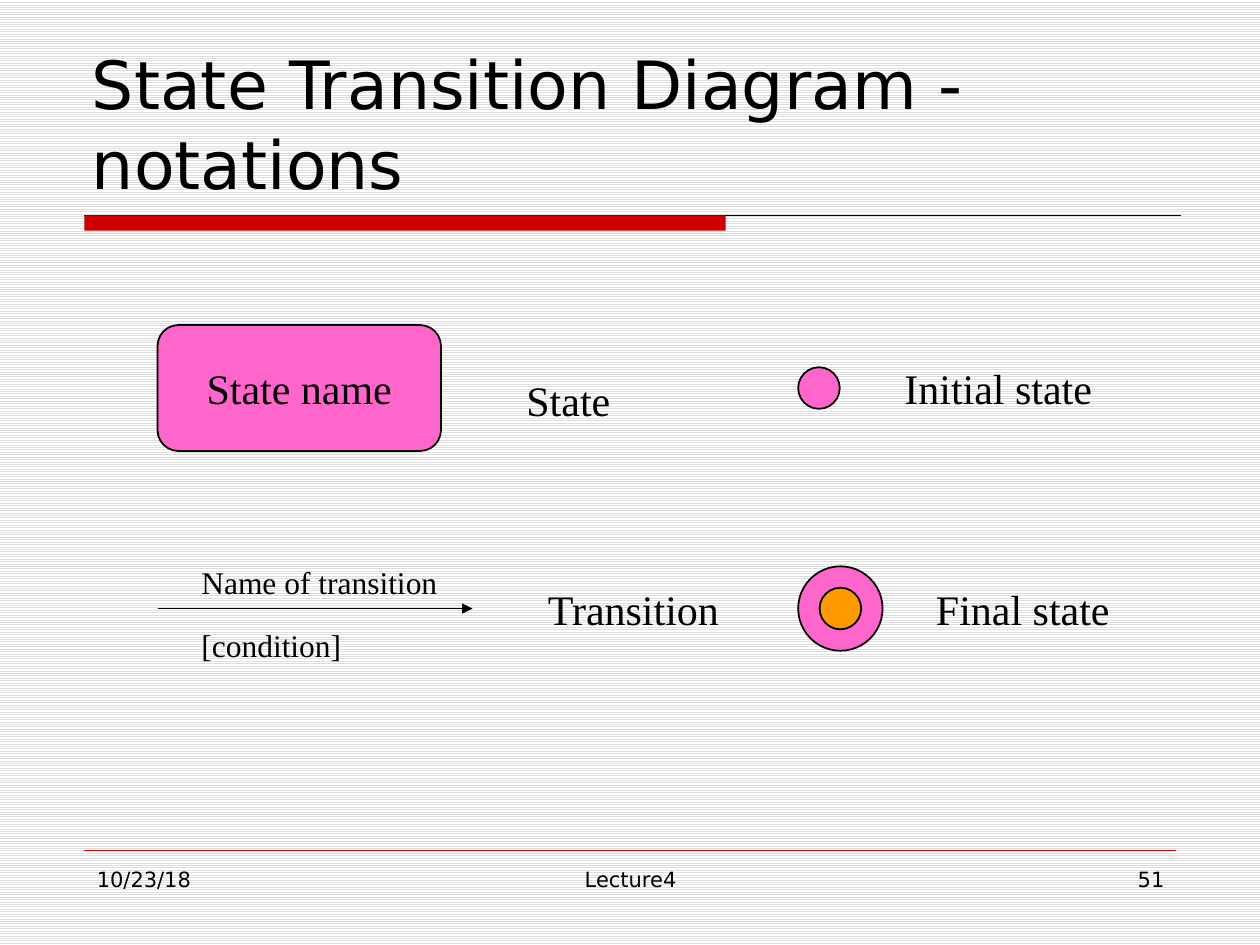
from dataclasses import dataclass

from lxml.etree import SubElement
from pptx import Presentation
from pptx.dml.color import RGBColor
from pptx.enum.dml import MSO_PATTERN
from pptx.enum.shapes import MSO_CONNECTOR, MSO_SHAPE
from pptx.enum.text import MSO_ANCHOR, MSO_AUTO_SIZE, PP_ALIGN
from pptx.oxml.ns import qn
from pptx.util import Inches, Pt


@dataclass(frozen=True)
class Theme:
    """Colours, fonts and type sizes."""
    ink: str = "000000"
    paper: str = "FFFFFF"
    stripe: str = "DDDDDD"
    red: str = "CC0000"
    pink: str = "FF66CC"
    orange: str = "FF9900"
    sans: str = "DejaVu Sans"
    serif: str = "Times New Roman"
    head: int = 38
    body: int = 24
    note: int = 18
    foot: int = 12


class Page:
    """Draws styled elements on one slide."""

    def __init__(self, slide, theme):
        """Keep the slide and theme, and stripe the background."""
        self.slide, self.theme = slide, theme
        fill = slide.background.fill
        fill.patterned()
        fill.pattern = MSO_PATTERN.LIGHT_HORIZONTAL
        fill.fore_color.rgb = RGBColor.from_string(theme.stripe)
        fill.back_color.rgb = RGBColor.from_string(theme.paper)

    def set_text(self, frame, text, size, font, align=PP_ALIGN.LEFT):
        """Set and format the text of a frame."""
        frame.text = text
        for para in frame.paragraphs:
            para.alignment = align
            for run in para.runs:
                run.font.size = Pt(size)
                run.font.name = font
                run.font.color.rgb = RGBColor.from_string(self.theme.ink)

    def title(self, text, box):
        """Place and fill the title placeholder."""
        shape = self.slide.shapes.title
        shape.left, shape.top, shape.width, shape.height = map(Inches, box)
        frame = shape.text_frame
        frame.auto_size = MSO_AUTO_SIZE.NONE
        frame.vertical_anchor = MSO_ANCHOR.BOTTOM
        self.set_text(frame, text, self.theme.head, self.theme.sans)

    def label(self, text, box, size, font, align=PP_ALIGN.LEFT):
        """Add a wrapping text box."""
        frame = self.slide.shapes.add_textbox(*map(Inches, box)).text_frame
        frame.word_wrap = True
        self.set_text(frame, text, size, font, align)

    def shape(self, kind, box, color, edge=True):
        """Add a filled preset shape."""
        shape = self.slide.shapes.add_shape(kind, *map(Inches, box))
        shape.shadow.inherit = False
        shape.fill.solid()
        shape.fill.fore_color.rgb = RGBColor.from_string(color)
        if edge:
            shape.line.color.rgb = RGBColor.from_string(self.theme.ink)
            shape.line.width = Pt(1)
        else:
            shape.line.fill.background()
        return shape

    def state(self, text, box):
        """Add a rounded state box with its name."""
        frame = self.shape(MSO_SHAPE.ROUNDED_RECTANGLE, box, self.theme.pink).text_frame
        frame.word_wrap = False
        frame.vertical_anchor = MSO_ANCHOR.MIDDLE
        self.set_text(frame, text, self.theme.body, self.theme.serif, PP_ALIGN.CENTER)

    def dot(self, x, y, size, color):
        """Add a circle around a centre point."""
        box = (x - size / 2, y - size / 2, size, size)
        self.shape(MSO_SHAPE.OVAL, box, color)

    def line(self, left, right, y, color, width, arrow=False):
        """Add a level line, with an arrowhead if asked."""
        ends = map(Inches, (left, y, right, y))
        line = self.slide.shapes.add_connector(MSO_CONNECTOR.STRAIGHT, *ends)
        line.line.color.rgb = RGBColor.from_string(color)
        line.line.width = Pt(width)
        props = line.element.spPr
        if arrow:
            SubElement(props.find(qn("a:ln")), qn("a:tailEnd"), type="triangle")
        SubElement(props, qn("a:effectLst"))


def main():
    """Build the slide of state diagram notations."""
    deck = Presentation()
    deck.slide_width, deck.slide_height = Inches(10), Inches(7.5)
    theme = Theme()
    page = Page(deck.slides.add_slide(deck.slide_layouts[5]), theme)

    page.line(0.67, 9.37, 1.71, theme.ink, 0.75)
    page.shape(MSO_SHAPE.RECTANGLE, (0.67, 1.71, 5.09, 0.12), theme.red, edge=False)
    page.line(0.67, 9.33, 6.75, theme.red, 0.25)
    for text, left, width, align in (
        ("10/23/18", 0.67, 2.17, PP_ALIGN.LEFT),
        ("Lecture4", 3.42, 3.17, PP_ALIGN.CENTER),
        ("51", 7.17, 2.17, PP_ALIGN.RIGHT),
    ):
        page.label(text, (left, 6.83, width, 0.52), theme.foot, theme.sans, align)
    page.title("State Transition Diagram - notations", (0.63, 0.33, 8.75, 1.33))

    page.state("State name", (1.25, 2.58, 2.25, 1))
    page.line(1.25, 3.75, 4.83, theme.ink, 1, arrow=True)
    page.dot(6.5, 3.08, 0.33, theme.pink)
    page.dot(6.67, 4.83, 0.67, theme.pink)
    page.dot(6.67, 4.83, 0.33, theme.orange)
    for text, box, size in (
        ("State", (4.08, 2.92, 2.33, 0.5), theme.body),
        ("Transition", (4.25, 4.58, 2.17, 0.5), theme.body),
        ("Name of transition", (1.5, 4.42, 2.17, 0.4), theme.note),
        ("[condition]", (1.5, 4.92, 2.08, 0.4), theme.note),
        ("Initial state", (7.08, 2.83, 2.42, 0.5), theme.body),
        ("Final state", (7.33, 4.58, 1.75, 0.5), theme.body),
    ):
        page.label(text, box, size, theme.serif)
    deck.save("out.pptx")


if __name__ == "__main__":
    main()
